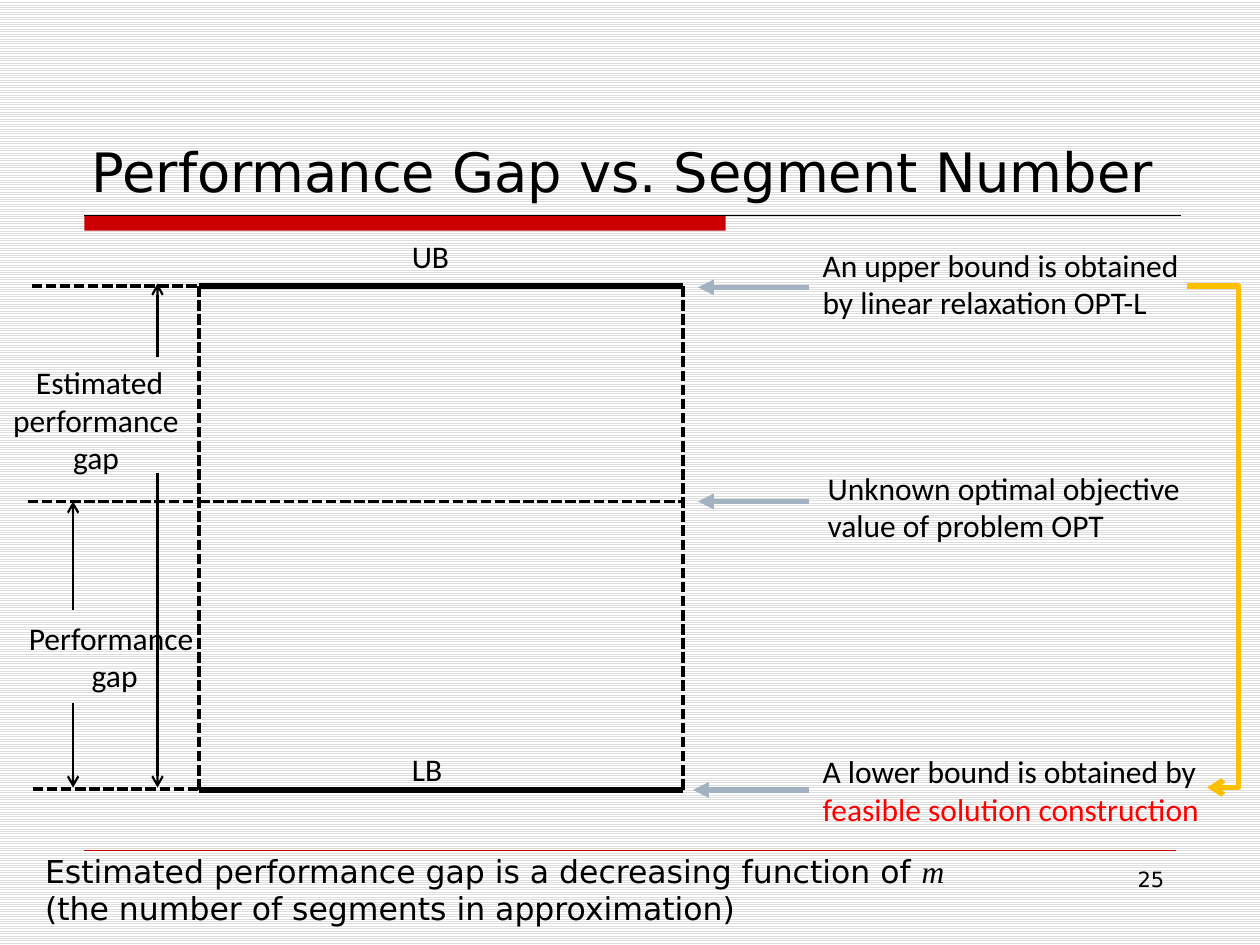
from lxml.etree import SubElement
from pptx import Presentation
from pptx.dml.color import RGBColor
from pptx.enum.dml import MSO_LINE, MSO_PATTERN
from pptx.enum.shapes import MSO_CONNECTOR, MSO_SHAPE
from pptx.enum.text import MSO_ANCHOR, MSO_AUTO_SIZE, PP_ALIGN
from pptx.oxml.ns import qn
from pptx.util import Inches, Pt

COLORS = {
    "black": "000000",
    "white": "FFFFFF",
    "stripe": "DDDDDD",
    "accent": "CC0000",
    "highlight": "FF0000",
    "pointer": "A3B2C1",
    "link": "FFC000",
}
LABEL = {"name": "Calibri", "size": Pt(18)}
HEADING = {"name": "DejaVu Sans", "size": Pt(31)}
NOTE = {"name": "DejaVu Sans", "size": Pt(18)}
NUMBER = {"name": "DejaVu Sans", "size": Pt(12)}
SYMBOL = {"name": "Times New Roman", "size": Pt(18), "italic": True}

DASHED = {"width": Pt(2), "dash_style": MSO_LINE.SQUARE_DOT}
BOUND = {"width": Pt(3)}
MEASURE = {"width": Pt(1.25)}
HAIRLINE = {"width": Pt(0.25)}
RULE = {"width": Pt(0.75)}

LEFT, RIGHT = 1.58, 5.42
UPPER, OPTIMUM, LOWER = 2.27, 3.98, 6.27


def color(name):
    return RGBColor.from_string(COLORS[name])


def apply_format(target, values):
    for attribute, value in values.items():
        setattr(target, attribute, value)


def set_background(slide):
    fill = slide.background.fill
    fill.patterned()
    fill.pattern = MSO_PATTERN.LIGHT_HORIZONTAL
    fill.fore_color.rgb = color("stripe")
    fill.back_color.rgb = color("white")


def add_line(slide, start, end, style, color_name="black", arrow=None,
             kind=MSO_CONNECTOR.STRAIGHT):
    connector = slide.shapes.add_connector(
        kind, *(Inches(value) for value in (*start, *end)))
    connector.line.color.rgb = color(color_name)
    apply_format(connector.line, style)
    if arrow:
        SubElement(connector.line._get_or_add_ln(), qn("a:tailEnd"), type=arrow)
    SubElement(connector._element.spPr, qn("a:effectLst"))
    return connector


def add_text(slide, box, paragraphs, wrap=True, align=PP_ALIGN.LEFT,
             anchor=MSO_ANCHOR.TOP, auto_size=MSO_AUTO_SIZE.SHAPE_TO_FIT_TEXT):
    shape = slide.shapes.add_textbox(*(Inches(value) for value in box))
    frame = shape.text_frame
    apply_format(frame, {"word_wrap": wrap, "vertical_anchor": anchor,
                         "auto_size": auto_size})
    for index, runs in enumerate(paragraphs):
        paragraph = frame.add_paragraph() if index else frame.paragraphs[0]
        paragraph.alignment = align
        for text, font, color_name in runs:
            run = paragraph.add_run()
            run.text = text
            apply_format(run.font, font)
            run.font.color.rgb = color(color_name)


def add_label(slide, box, lines, last_color="black", **options):
    colors = ["black"] * (len(lines) - 1) + [last_color]
    paragraphs = [[(line, LABEL, name)] for line, name in zip(lines, colors)]
    add_text(slide, box, paragraphs, **options)


def add_heading(slide):
    bar = slide.shapes.add_shape(
        MSO_SHAPE.RECTANGLE, Inches(0.67), Inches(1.71), Inches(5.09), Inches(0.12))
    bar.shadow.inherit = False
    bar.fill.solid()
    bar.fill.fore_color.rgb = color("accent")
    bar.line.fill.background()
    add_line(slide, (0.67, 1.71), (9.37, 1.71), RULE)
    add_text(slide, (0.63, 0.33, 8.75, 1.33),
             [[("Performance Gap vs. Segment Number", HEADING, "black")]],
             anchor=MSO_ANCHOR.BOTTOM, auto_size=MSO_AUTO_SIZE.NONE)


def add_bounds(slide):
    for x in (LEFT, RIGHT):
        add_line(slide, (x, UPPER), (x, LOWER), DASHED)
    for y in (UPPER, LOWER):
        add_line(slide, (LEFT, y), (RIGHT, y), BOUND)
    for y in (UPPER, OPTIMUM, LOWER):
        add_line(slide, (LEFT, y), (RIGHT, y), DASHED)
    for x, y in ((0.25, UPPER), (0.22, OPTIMUM), (0.26, 6.26)):
        add_line(slide, (x, y), (LEFT, y), DASHED)
    add_label(slide, (3.17, 1.83, 0.67, 0.44), ["UB"])
    add_label(slide, (3.17, 5.9, 0.55, 0.44), ["LB"], wrap=False)


def add_gaps(slide):
    for x, start, end in ((0.58, 4.84, OPTIMUM), (0.58, 5.58, 6.25),
                          (1.25, 3.75, 6.25), (1.25, 2.83, 2.25)):
        add_line(slide, (x, start), (x, end), MEASURE, arrow="arrow")
    add_label(slide, (0.12, 4.86, 1.58, 0.71), ["Performance ", "gap"],
              wrap=False, align=PP_ALIGN.CENTER)
    add_label(slide, (0, 2.83, 1.58, 1.31), ["Estimated", "performance ", "gap "],
              align=PP_ALIGN.CENTER)


def add_explanations(slide):
    for tip, y in ((5.54, 2.28), (5.54, OPTIMUM), (5.5, LOWER)):
        add_line(slide, (6.42, y), (tip, y), BOUND, "pointer", "triangle")
    add_label(slide, (6.43, 1.9, 3.12, 0.71),
              ["An upper bound is obtained", "by linear relaxation OPT-L"], wrap=False)
    add_label(slide, (6.47, 3.67, 3.09, 0.71),
              ["Unknown optimal objective", "value of problem OPT"], wrap=False)
    add_label(slide, (6.43, 5.92, 3.28, 0.71),
              ["A lower bound is obtained by", "feasible solution construction"],
              last_color="highlight", wrap=False)
    link = add_line(slide, (9.42, UPPER), (9.58, 6.25), BOUND, "link", "arrow",
                    MSO_CONNECTOR.ELBOW)
    geometry = link._element.spPr.find(qn("a:prstGeom"))
    SubElement(geometry.find(qn("a:avLst")), qn("a:gd"),
               name="adj1", fmla="val 254800")


def add_footer(slide):
    add_line(slide, (0.67, 6.75), (9.33, 6.75), HAIRLINE, "accent")
    add_text(slide, (0.26, 6.71, 7.5, 0.71), [[
        ("Estimated performance gap is a decreasing function of ", NOTE, "black"),
        ("m", SYMBOL, "black"),
        (" (the number of segments in approximation)", NOTE, "black"),
    ]])
    add_text(slide, (7.17, 6.83, 2.17, 0.52), [[("25", NUMBER, "black")]],
             align=PP_ALIGN.RIGHT, auto_size=MSO_AUTO_SIZE.NONE)


def main():
    presentation = Presentation()
    presentation.slide_width = Inches(10)
    presentation.slide_height = Inches(7.5)
    slide = presentation.slides.add_slide(presentation.slide_layouts[6])
    set_background(slide)
    add_heading(slide)
    add_bounds(slide)
    add_gaps(slide)
    add_explanations(slide)
    add_footer(slide)
    presentation.save("out.pptx")


if __name__ == "__main__":
    main()
